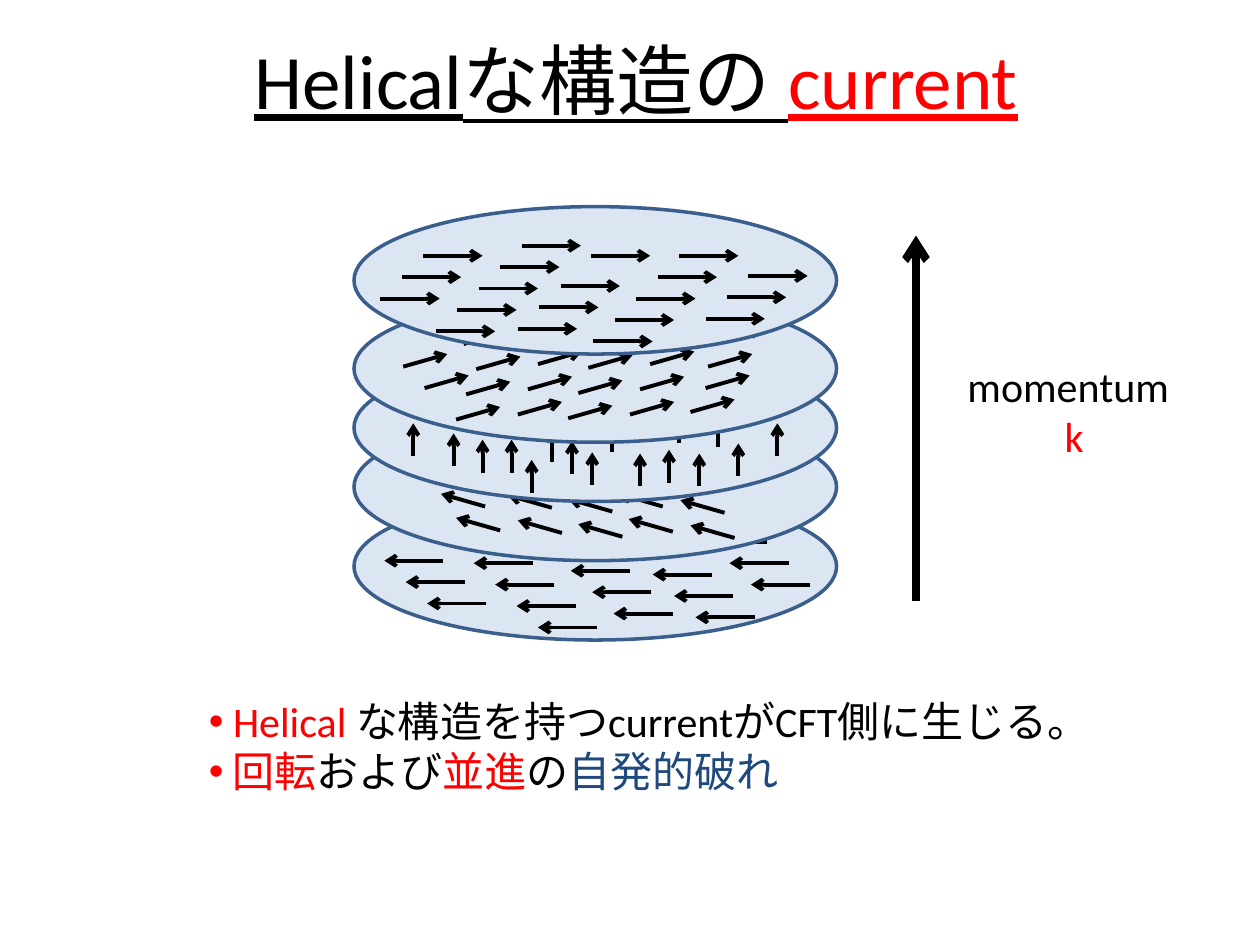
from lxml import etree
from pptx import Presentation
from pptx.dml.color import RGBColor
from pptx.enum import shapes, text
from pptx.oxml import ns
from pptx.util import Inches, Pt

BLACK = RGBColor(0x00, 0x00, 0x00)
RED = RGBColor(0xFF, 0x00, 0x00)
NAVY = RGBColor(0x1F, 0x49, 0x7D)
PALE = RGBColor(0xDC, 0xE6, 0xF2)
EDGE = RGBColor(0x3A, 0x5F, 0x8C)


def arrow(x, y, dx, dy, width=2.25):
    line = slide.shapes.add_connector(
        shapes.MSO_CONNECTOR.STRAIGHT,
        Inches(x), Inches(y), Inches(x + dx), Inches(y + dy))
    line.line.color.rgb = BLACK
    line.line.width = Pt(width)
    etree.SubElement(line.line._get_or_add_ln(), ns.qn("a:tailEnd"), type="arrow")
    etree.SubElement(line._element.spPr, ns.qn("a:effectLst"))


def write(para, runs, size):
    for words, color in runs:
        run = para.add_run()
        run.text = words
        run.font.name = "Calibri"
        run.font.size = Pt(size)
        run.font.color.rgb = color


deck = Presentation()
deck.slide_width, deck.slide_height = Inches(10), Inches(7.5)
slide = deck.slides.add_slide(deck.slide_layouts[5])

title = slide.shapes.title
title.left, title.top = Inches(0.55), Inches(0)
title.width, title.height = Inches(9), Inches(1.25)
title.text_frame.vertical_anchor = text.MSO_ANCHOR.MIDDLE
head = title.text_frame.paragraphs[0]
head.alignment = text.PP_ALIGN.CENTER
write(head, [("Helicalな構造の ", BLACK), ("current", RED)], 44)
for run in head.runs:
    run.font.underline = True

# Each disc: top, arrow vector, step along a row, rows of (x, y, count).
discs = [
    (3.91, (-0.47, 0), (0.17, 0.17), [
        (5, 4.53, 3), (5.31, 4.22, 5), (4.77, 4.3, 1),
        (4.06, 4.3, 5), (3.52, 4.45, 3), (6.09, 4.3, 3)]),
    (3.28, (-0.35, -0.1), (0.08, 0.2), [
        (4.78, 3.86, 3), (5.1, 3.62, 4), (5.77, 3.67, 1),
        (4.67, 3.58, 1), (3.97, 4.21, 1), (4.22, 3.63, 4),
        (3.85, 4.02, 1), (3.76, 3.65, 2), (5.67, 3.87, 3)]),
    (2.81, (0, -0.26), (0.16, 0.09), [
        (4.69, 3.5, 1), (4.86, 3.59, 1), (5.08, 3.86, 1),
        (4.38, 3.67, 3), (5.86, 3.78, 1), (3.6, 3.7, 1),
        (4.06, 3.75, 1), (5.39, 3.52, 1), (5.7, 3.55, 1),
        (4.45, 3.39, 1), (5.12, 3.34, 1), (3.99, 3.36, 1),
        (4.22, 3.36, 1), (5.55, 3.86, 1), (4.22, 3.91, 1),
        (3.83, 3.75, 1), (5.31, 3.83, 1)]),
    (2.34, (0.35, -0.1), (-0.08, 0.2), [
        (4.67, 2.92, 3), (4.35, 2.69, 4), (3.68, 2.73, 1),
        (4.79, 2.64, 1), (5.48, 3.27, 1), (5.24, 2.69, 4),
        (5.6, 3.08, 1), (5.7, 2.71, 2), (3.78, 2.93, 3),
        (3.2, 2.91, 1), (3.37, 3.08, 1)]),
    (1.64, (0.47, 0), (-0.17, 0.17), [
        (4.45, 2.27, 3), (4.14, 1.95, 5), (4.69, 2.03, 1),
        (5.39, 2.03, 5), (5.94, 2.19, 3), (3.36, 2.03, 3)]),
]
for top, way, step, rows in discs:
    disc = slide.shapes.add_shape(
        shapes.MSO_SHAPE.OVAL, Inches(2.81), Inches(top), Inches(3.83), Inches(1.17))
    disc.shadow.inherit = False
    disc.fill.solid()
    disc.fill.fore_color.rgb = PALE
    disc.line.color.rgb = EDGE
    disc.line.width = Pt(2)
    for x, y, count in rows:
        for i in range(count):
            arrow(x + i * step[0], y + i * step[1], *way)

for x in (3.28, 6.17):
    arrow(x, 3.62, 0, -0.26)
arrow(7.27, 4.77, 0, -2.9, 4.5)

label = slide.shapes.add_textbox(Inches(7.58), Inches(2.81), Inches(1.89), Inches(0.91))
frame = label.text_frame
frame.word_wrap = True
write(frame.paragraphs[0], [("momentum", BLACK)], 24)
para = frame.add_paragraph()
para.alignment = text.PP_ALIGN.CENTER
write(para, [("k", RED)], 24)

notes = slide.shapes.add_textbox(Inches(1.56), Inches(5.47), Inches(6.9), Inches(0.91))
frame = notes.text_frame
frame.word_wrap = True
points = [
    [(" Helical ", RED), ("な構造を持つcurrentがCFT側に生じる。", BLACK)],
    [(" 回転", RED), ("および", BLACK), ("並進", RED), ("の", BLACK), ("自発的破れ", NAVY)],
]
for i, runs in enumerate(points):
    para = frame.add_paragraph() if i else frame.paragraphs[0]
    props = para._p.get_or_add_pPr()
    etree.SubElement(props, ns.qn("a:buFont"), typeface="Arial")
    etree.SubElement(props, ns.qn("a:buChar"), char="•")
    write(para, runs, 24)

deck.save("out.pptx")
